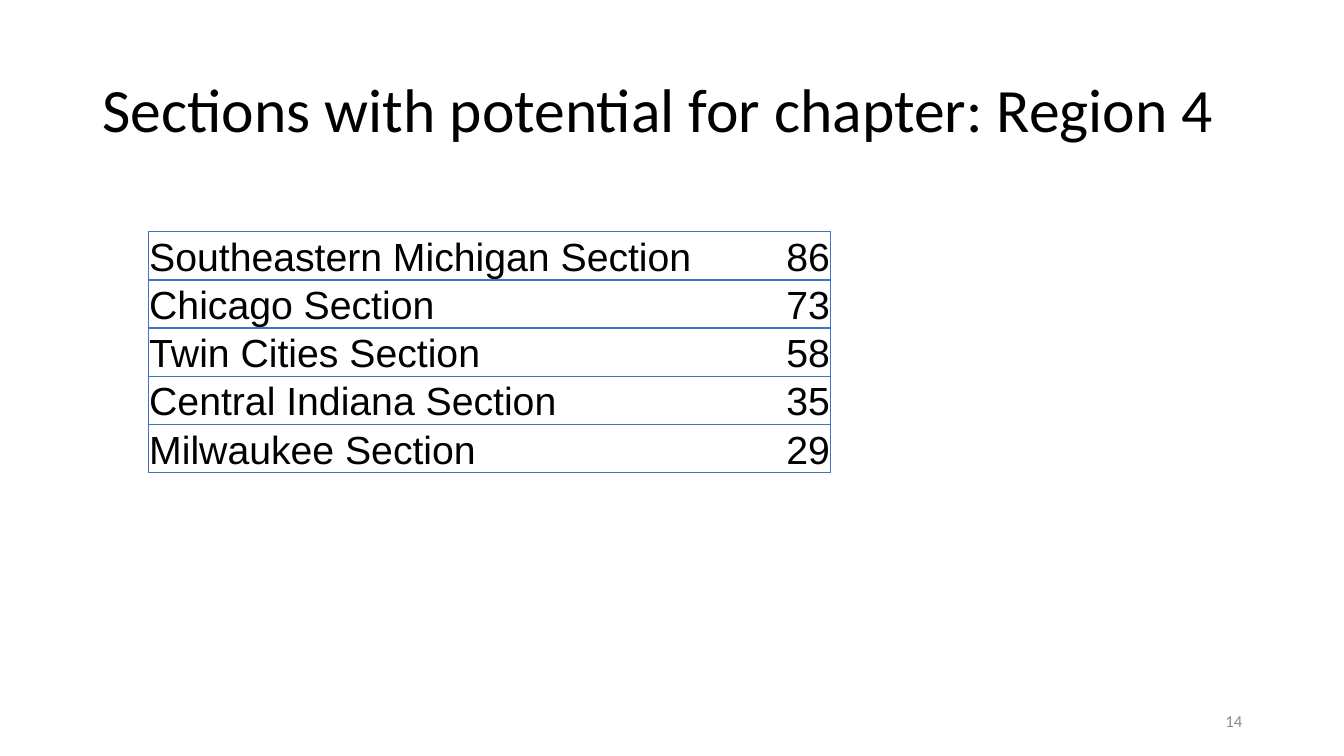
from lxml.etree import SubElement as Sub
from pptx import Presentation
from pptx.dml.color import RGBColor as RGB
from pptx.enum.text import MSO_ANCHOR as Anchor, PP_ALIGN as Align
from pptx.oxml.ns import qn
from pptx.util import Inches, Pt

COLORS = {"ink": "000000", "page": "8C8C8C", "line": "4472C4", "paper": "FFFFFF"}
SECTIONS = [
    ("Southeastern Michigan Section", 86),
    ("Chicago Section", 73),
    ("Twin Cities Section", 58),
    ("Central Indiana Section", 35),
    ("Milwaukee Section", 29),
]


def assign(target, values):
    for name, value in values.items():
        setattr(target, name, value)


def write(frame, text, size, face, color, align=Align.LEFT):
    para = frame.paragraphs[0]
    para.alignment = align
    run = para.add_run()
    run.text = text
    assign(run.font, {"size": Pt(size), "name": face, "bold": False})
    run.font.color.rgb = RGB.from_string(COLORS[color])
    return para


def add_box(slide, box, anchor):
    frame = slide.shapes.add_textbox(*map(Inches, box)).text_frame
    assign(frame, {"word_wrap": True, "vertical_anchor": anchor})
    return frame


def add_title(slide, box, text):
    frame = add_box(slide, box, Anchor.TOP)
    write(frame, text, 44, "Calibri", "ink").line_spacing = 0.9


def add_number(slide, box, text):
    frame = add_box(slide, box, Anchor.MIDDLE)
    write(frame, text, 12, "Calibri", "page", Align.RIGHT)


def add_edges(cell, drawn):
    props = cell._tc.get_or_add_tcPr()
    for side in "LRTB":
        edge = Sub(props, qn(f"a:ln{side}"), w=str(Pt(1)))
        if side in drawn:
            fill = Sub(edge, qn("a:solidFill"))
            Sub(fill, qn("a:srgbClr"), val=COLORS["line"])
        else:
            Sub(edge, qn("a:noFill"))


def add_counts(slide, box, rows):
    left, top, width, height = box
    frame = slide.shapes.add_table(len(rows), 2, *map(Inches, box))
    table = frame.table
    assign(table, {"first_row": False, "horz_banding": False})
    count = 0.96
    for column, size in zip(table.columns, (width - count, count)):
        column.width = Inches(size)
    style = {
        "vertical_anchor": Anchor.BOTTOM,
        "margin_left": Inches(0.01),
        "margin_right": Inches(0.01),
        "margin_top": Inches(0.01),
        "margin_bottom": 0,
    }
    kinds = (("LTB", Align.LEFT), ("RTB", Align.RIGHT))
    for r, row in enumerate(rows):
        table.rows[r].height = Inches(height / len(rows))
        for c, (value, (edges, align)) in enumerate(zip(row, kinds)):
            cell = table.cell(r, c)
            assign(cell, style)
            add_edges(cell, edges)
            cell.fill.solid()
            cell.fill.fore_color.rgb = RGB.from_string(COLORS["paper"])
            write(cell.text_frame, str(value), 28, "Arial", "ink", align)


def main():
    deck = Presentation()
    assign(deck, {"slide_width": Inches(13.33), "slide_height": Inches(7.5)})
    slide = deck.slides.add_slide(deck.slide_layouts[6])
    add_title(slide, (0.92, 0.74, 11.5, 1.1),
              "Sections with potential for chapter: Region 4")
    add_number(slide, (9.42, 6.95, 3, 0.4), "14")
    add_counts(slide, (1.47, 2.3, 6.77, 1.95), SECTIONS)
    deck.save("out.pptx")


if __name__ == "__main__":
    main()
